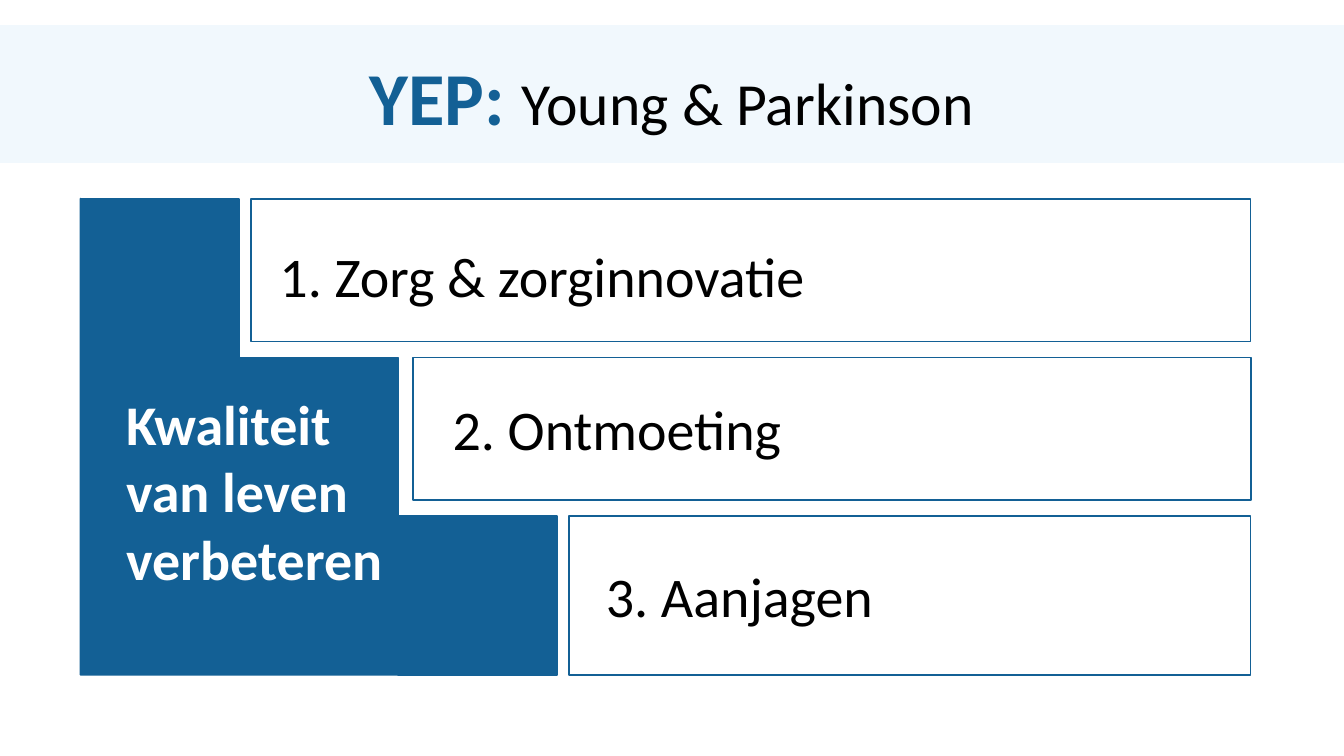
from pptx import Presentation
from pptx.dml.color import RGBColor
from pptx.enum.shapes import MSO_SHAPE
from pptx.enum.text import MSO_ANCHOR, MSO_AUTO_SIZE, PP_ALIGN
from pptx.util import Pt

# Content
TITLE = ("YEP: ", "Young & Parkinson")
GOAL = ["Kwaliteit", "van leven verbeteren"]
# Bar left and height, label left, top and width, label text
THEMES = [
    (134.6, 76.5, 142.6, 126, 434, "1. Zorg & zorginnovatie"),
    (221.3, 76.5, 235.4, 208, 434, "2. Ontmoeting"),
    (305, 85, 317.5, 297.4, 333, "3. Aanjagen"),
]

THEME = {
    "font": "Calibri",
    "blue": RGBColor(0x13, 0x60, 0x95),
    "pale": RGBColor(0xF1, 0xF8, 0xFD),
    "black": RGBColor(0, 0, 0),
    "white": RGBColor(0xFF, 0xFF, 0xFF),
    "name_size": Pt(40),
    "title_size": Pt(32),
    "text_size": Pt(30),
}

# Stair geometry
LEFT, TOP, STEP, RIGHT = 43.2, 106.5, 85, 670


def add_block(slide, kind, left, top, width, height, line, fill=None):
    shape = slide.shapes.add_shape(kind, Pt(left), Pt(top), Pt(width), Pt(height))
    shape.shadow.inherit = False
    if fill is None:
        shape.fill.background()
    else:
        shape.fill.solid()
        shape.fill.fore_color.rgb = fill
    shape.line.color.rgb = line
    shape.line.width = Pt(1)
    return shape


def set_font(font, size, color, bold=False):
    font.name = THEME["font"]
    font.size = size
    font.color.rgb = color
    font.bold = bold


def add_text(slide, left, top, width, height, lines, color, bold=False):
    box = slide.shapes.add_textbox(Pt(left), Pt(top), Pt(width), Pt(height))
    frame = box.text_frame
    frame.word_wrap = True
    frame.text = "\n".join(lines)
    for paragraph in frame.paragraphs:
        set_font(paragraph.font, THEME["text_size"], color, bold)


def add_title(slide):
    title = slide.shapes.title
    title.left, title.top, title.width, title.height = Pt(0), Pt(33), Pt(720), Pt(42)
    frame = title.text_frame
    frame.auto_size = MSO_AUTO_SIZE.NONE
    frame.vertical_anchor = MSO_ANCHOR.MIDDLE
    frame.margin_left = frame.margin_right = frame.margin_top = frame.margin_bottom = 0
    paragraph = frame.paragraphs[0]
    paragraph.alignment = PP_ALIGN.CENTER
    paragraph.line_spacing = Pt(42)
    name, meaning = (paragraph.add_run() for _ in TITLE)
    name.text, meaning.text = TITLE
    set_font(name.font, THEME["name_size"], THEME["blue"], True)
    set_font(meaning.font, THEME["title_size"], THEME["black"])


def main():
    presentation = Presentation()
    presentation.slide_width, presentation.slide_height = Pt(720), Pt(405)
    slide = presentation.slides.add_slide(presentation.slide_layouts[5])
    blue = THEME["blue"]

    # Title on a pale band; the band goes behind the placeholder
    add_title(slide)
    band = add_block(slide, MSO_SHAPE.RECTANGLE, 0, 13.7, 720, 73.4,
                     THEME["pale"], THEME["pale"])
    slide.shapes.title._element.addprevious(band._element)

    # Blue staircase: a triangle filled out with one square per step
    side = STEP * len(THEMES)
    add_block(slide, MSO_SHAPE.RIGHT_TRIANGLE, LEFT, TOP, side, side, blue, blue)
    for index in range(len(THEMES)):
        offset = index * STEP
        add_block(slide, MSO_SHAPE.RECTANGLE, LEFT + offset, TOP + offset,
                  STEP, STEP, blue, blue)

    # Outlined bar and label beside each step
    for index, (left, height, text_left, text_top, width, label) in enumerate(THEMES):
        add_block(slide, MSO_SHAPE.RECTANGLE, left, TOP + index * STEP,
                  RIGHT - left, height, blue)
        add_text(slide, text_left, text_top, width, 44, [label], THEME["black"])

    # Goal on the staircase
    add_text(slide, 60.5, 205.2, 171.4, 116.6, GOAL, THEME["white"], True)

    presentation.save("out.pptx")


if __name__ == "__main__":
    main()
